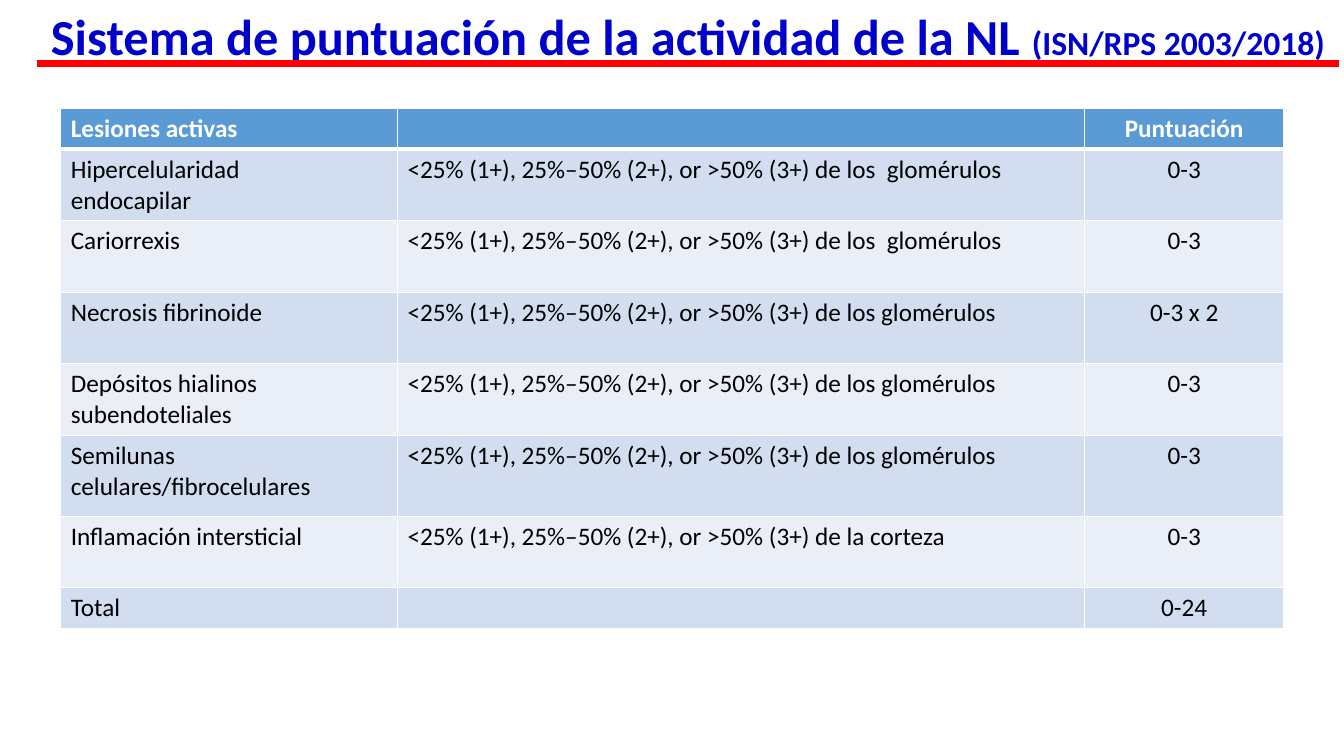
from dataclasses import dataclass

from lxml.etree import SubElement
from pptx import Presentation
from pptx.dml.color import RGBColor
from pptx.enum.shapes import MSO_CONNECTOR
from pptx.enum.text import MSO_ANCHOR, MSO_AUTO_SIZE, PP_ALIGN
from pptx.oxml.ns import qn
from pptx.util import Pt

CRITERION = "<25% (1+), 25%–50% (2+), or >50% (3+) de "
SPACED_GLOMERULI = CRITERION + "los  glomérulos"
GLOMERULI = CRITERION + "los glomérulos"
TITLE = (
    ("Sistema de puntuación de la actividad de la NL ", 36),
    ("(ISN/RPS 2003/2018)", 24),
)
LESIONS = (
    ("Lesiones activas", "", "Puntuación"),
    ("Hipercelularidad\nendocapilar", SPACED_GLOMERULI, "0-3"),
    ("Cariorrexis", SPACED_GLOMERULI, "0-3"),
    ("Necrosis fibrinoide", GLOMERULI, "0-3 x 2"),
    ("Depósitos hialinos subendoteliales", GLOMERULI, "0-3"),
    ("Semilunas\ncelulares/fibrocelulares", GLOMERULI, "0-3"),
    ("Inflamación intersticial", CRITERION + "la corteza", "0-3"),
    ("Total", "", "0-24"),
)
COLUMN_WIDTHS = (240.5, 491, 142)
ROW_HEIGHTS = (29, 51, 51, 51, 51, 58, 51, 29)


@dataclass(frozen=True)
class Theme:
    """Colours, font and sizes of the slide."""

    font: str = "Calibri"
    body_size: float = 18
    title: str = "0000CC"
    rule: str = "FF0000"
    header: str = "5B9BD5"
    bands: tuple = ("D2DEEF", "EAEFF7")
    light: str = "FFFFFF"
    dark: str = "000000"


THEME = Theme()


def style_font(font, size, color, bold):
    """Set the face, size, colour and weight of a font."""
    font.name = THEME.font
    font.size = Pt(size)
    font.bold = bold
    font.color.rgb = RGBColor.from_string(color)


def add_title(slide):
    """Place the title and write its runs."""
    title = slide.shapes.title
    title.left, title.top, title.width, title.height = Pt(-15), Pt(0), Pt(1013), Pt(43.2)
    frame = title.text_frame
    frame.auto_size = MSO_AUTO_SIZE.NONE
    frame.word_wrap = True
    frame.vertical_anchor = MSO_ANCHOR.TOP
    heading = frame.paragraphs[0]
    heading.alignment = PP_ALIGN.CENTER
    for wording, size in TITLE:
        run = heading.add_run()
        run.text = wording
        style_font(run.font, size, THEME.title, True)


def add_rule(slide):
    """Draw the red line under the title."""
    rule = slide.shapes.add_connector(
        MSO_CONNECTOR.STRAIGHT, Pt(26.6), Pt(45.4), Pt(956.2), Pt(45.4)
    )
    rule.line.color.rgb = RGBColor.from_string(THEME.rule)
    rule.line.width = Pt(4.5)
    SubElement(rule._element.spPr, qn("a:effectLst"))


def set_borders(cell, row):
    """Give a cell white borders, thicker under the header."""
    widths = {"L": 1, "R": 1, "T": 3 if row == 1 else 1, "B": 3 if row == 0 else 1}
    properties = cell._tc.get_or_add_tcPr()
    for side, width in widths.items():
        border = SubElement(properties, qn(f"a:ln{side}"), w=str(Pt(width)))
        paint = SubElement(border, qn("a:solidFill"))
        SubElement(paint, qn("a:srgbClr"), val=THEME.light)


def fill_cell(cell, wording, row, column):
    """Paint one cell and write its paragraphs."""
    is_header = row == 0
    set_borders(cell, row)
    cell.fill.solid()
    background = THEME.header if is_header else THEME.bands[(row - 1) % 2]
    cell.fill.fore_color.rgb = RGBColor.from_string(background)
    color = THEME.light if is_header else THEME.dark
    frame = cell.text_frame
    for index, line in enumerate(wording.split("\n")):
        paragraph = frame.add_paragraph() if index else frame.paragraphs[0]
        paragraph.alignment = PP_ALIGN.CENTER if column == 2 else PP_ALIGN.LEFT
        if line:
            run = paragraph.add_run()
            run.text = line
            style_font(run.font, THEME.body_size, color, is_header)


def add_scores(slide):
    """Build the table of lesions and scores."""
    scores = slide.shapes.add_table(
        len(LESIONS), len(COLUMN_WIDTHS), Pt(43.4), Pt(77.4),
        Pt(sum(COLUMN_WIDTHS)), Pt(sum(ROW_HEIGHTS)),
    ).table
    for column, width in zip(scores.columns, COLUMN_WIDTHS):
        column.width = Pt(width)
    for row, height in zip(scores.rows, ROW_HEIGHTS):
        row.height = Pt(height)
    for row, lesion in enumerate(LESIONS):
        for column, wording in enumerate(lesion):
            fill_cell(scores.cell(row, column), wording, row, column)


def main():
    """Build and save the slide."""
    deck = Presentation()
    deck.slide_width, deck.slide_height = Pt(960), Pt(540)
    slide = deck.slides.add_slide(deck.slide_layouts[5])
    add_scores(slide)
    add_rule(slide)
    add_title(slide)
    deck.save("out.pptx")


if __name__ == "__main__":
    main()
